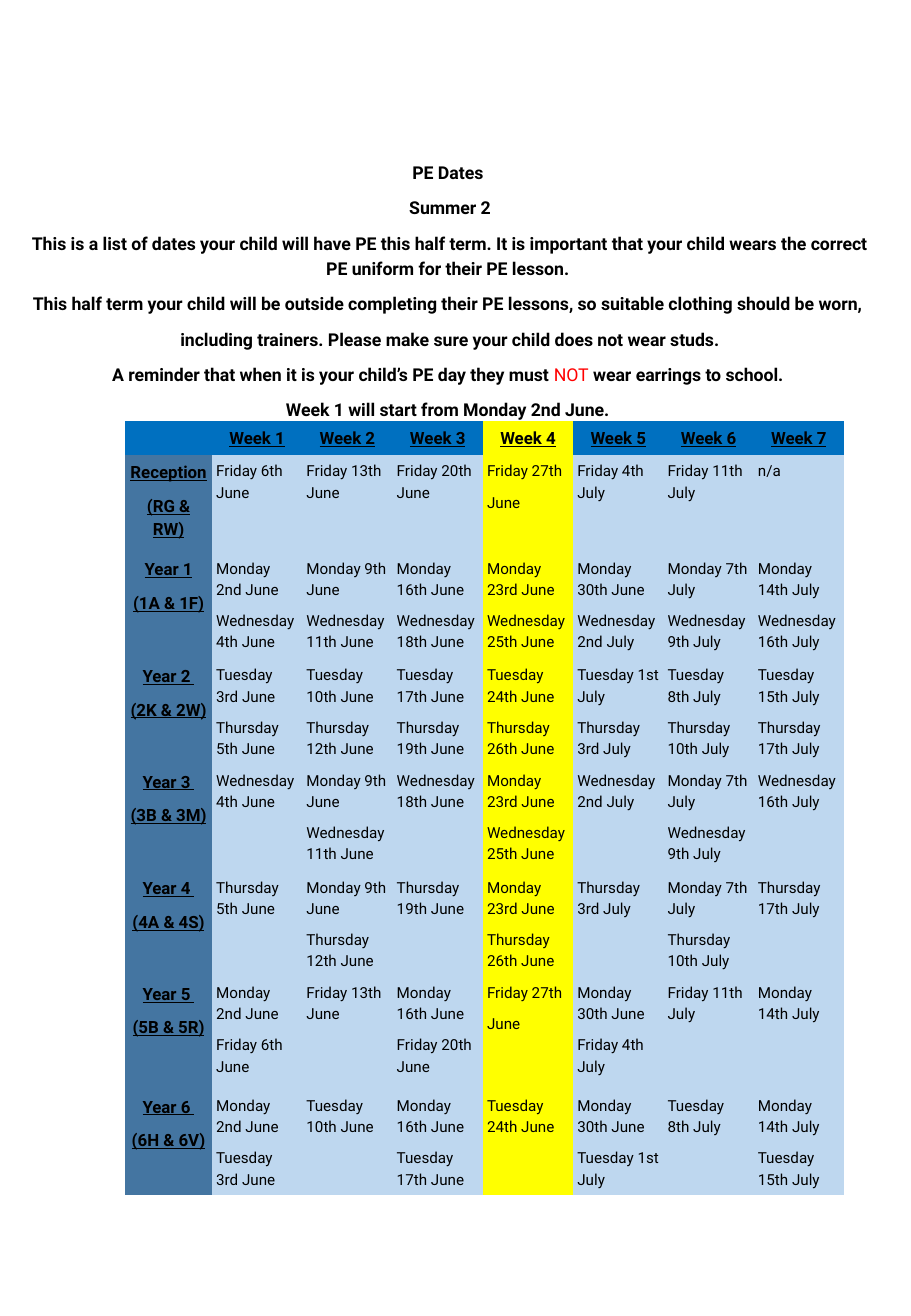
from pptx import Presentation
from pptx.dml.color import RGBColor
from pptx.enum.text import PP_ALIGN
from pptx.util import Pt

PX = 4572
BLACK = RGBColor(0, 0, 0)
RED = RGBColor(255, 0, 0)
BLUE = RGBColor(0x00, 0x70, 0xC0)
STEEL = RGBColor(0x44, 0x75, 0xA1)
PALE = RGBColor(0xBE, 0xD7, 0xEF)
YELLOW = RGBColor(255, 255, 0)
PLAIN = "{2D5ABB26-0587-4C30-8999-92F81FD0307C}"


def style(para, size, bold, line=False, align=PP_ALIGN.CENTER):
    para.alignment = align
    para.line_spacing = 1.19
    para.space_after = Pt(6)
    font = para.font
    font.name = "Roboto"
    font.size = Pt(size)
    font.bold = bold
    font.underline = line
    font.color.rgb = BLACK


deck = Presentation()
deck.slide_width = 1500 * PX
deck.slide_height = 2168 * PX
slide = deck.slides.add_slide(deck.slide_layouts[6])

intro = [
    "PE Dates ",
    "Summer 2",
    "This is a list of dates your child will have PE this half term. It is important that "
    "your child wears the correct PE uniform for their PE lesson. ",
    "This half term your child will be outside completing their PE lessons, "
    "so suitable clothing should be worn, ",
    "including trainers. Please make sure your child does not wear studs.",
    "A reminder that when it is your child’s PE day they must NOT wear earrings to school. ",
    "Week 1 will start from Monday 2nd June. ",
]
box = slide.shapes.add_textbox(26 * PX, 250 * PX, 1430 * PX, 456 * PX)
frame = box.text_frame
frame.word_wrap = True
for i, text in enumerate(intro):
    para = frame.add_paragraph() if i else frame.paragraphs[0]
    style(para, 10.5, True)
    before, word, after = text.partition("NOT")
    para.add_run().text = before
    if word:
        run = para.add_run()
        run.text = word
        run.font.bold = False
        run.font.color.rgb = RED
        para.add_run().text = after

rows = [
    (56, [""] + [f"Week {n}" for n in range(1, 8)]),
    (160, ["Reception \n(RG & RW)", "Friday 6th June", "Friday 13th June", "Friday 20th June",
           "Friday 27th\nJune", "Friday 4th July", "Friday 11th July", "n/a"]),
    (176, ["Year 1\n(1A & 1F)", "Monday 2nd June\nWednesday 4th June",
           "Monday 9th June\nWednesday 11th June", "Monday 16th June\nWednesday 18th June",
           "Monday 23rd June\nWednesday 25th June", "Monday 30th June\nWednesday 2nd July",
           "Monday 7th July\nWednesday 9th July", "Monday 14th July\nWednesday 16th July"]),
    (146, ["Year 2 \n(2K & 2W)", "Tuesday 3rd June\nThursday 5th June",
           "Tuesday 10th June\nThursday 12th June", "Tuesday 17th June\nThursday 19th June",
           "Tuesday 24th June\nThursday 26th June", "Tuesday 1st July\nThursday 3rd July",
           "Tuesday 8th July\nThursday 10th July", "Tuesday 15th July\nThursday 17th July"]),
    (176, ["Year 3 \n(3B & 3M)", "Wednesday 4th June", "Monday 9th June\nWednesday 11th June",
           "Wednesday 18th June", "Monday 23rd June\nWednesday 25th June",
           "Wednesday 2nd July", "Monday 7th July\nWednesday 9th July",
           "Wednesday 16th July"]),
    (146, ["Year 4 \n(4A & 4S)", "Thursday 5th June", "Monday 9th June\nThursday 12th June",
           "Thursday 19th June", "Monday 23rd June\nThursday 26th June",
           "Thursday 3rd July", "Monday 7th July\nThursday 10th July", "Thursday 17th July"]),
    (186, ["Year 5 \n(5B & 5R)", "Monday 2nd June\nFriday 6th June", "Friday 13th June",
           "Monday 16th June\nFriday 20th June", "Friday 27th\nJune",
           "Monday 30th June\nFriday 4th July", "Friday 11th July", "Monday 14th July"]),
    (146, ["Year 6 \n(6H & 6V)", "Monday 2nd June\nTuesday 3rd June", "Tuesday 10th June",
           "Monday 16th June\nTuesday 17th June", "Tuesday 24th June",
           "Monday 30th June\nTuesday 1st July", "Tuesday 8th July",
           "Monday 14th July\nTuesday 15th July"]),
]
shape = slide.shapes.add_table(8, 8, 206 * PX, 694 * PX, 1184 * PX, 1272 * PX)
table = shape.table
table.first_row = False
table.horz_banding = False
table._tbl.tblPr[0].text = PLAIN
for c, col in enumerate(table.columns):
    col.width = 1041 * PX // 7 if c else 143 * PX
for r, (height, texts) in enumerate(rows):
    table.rows[r].height = height * PX
    for c, text in enumerate(texts):
        cell = table.cell(r, c)
        cell.margin_left = cell.margin_right = 7 * PX
        cell.margin_top = cell.margin_bottom = 7 * PX
        cell.fill.solid()
        cell.fill.fore_color.rgb = (
            YELLOW if c == 4 else BLUE if r == 0 else PALE if c else STEEL)
        cell.text = text
        for para in cell.text_frame.paragraphs:
            if r == 0 or c == 0:
                style(para, 10, True, True)
            else:
                style(para, 9, False, align=PP_ALIGN.LEFT)

deck.save("out.pptx")
